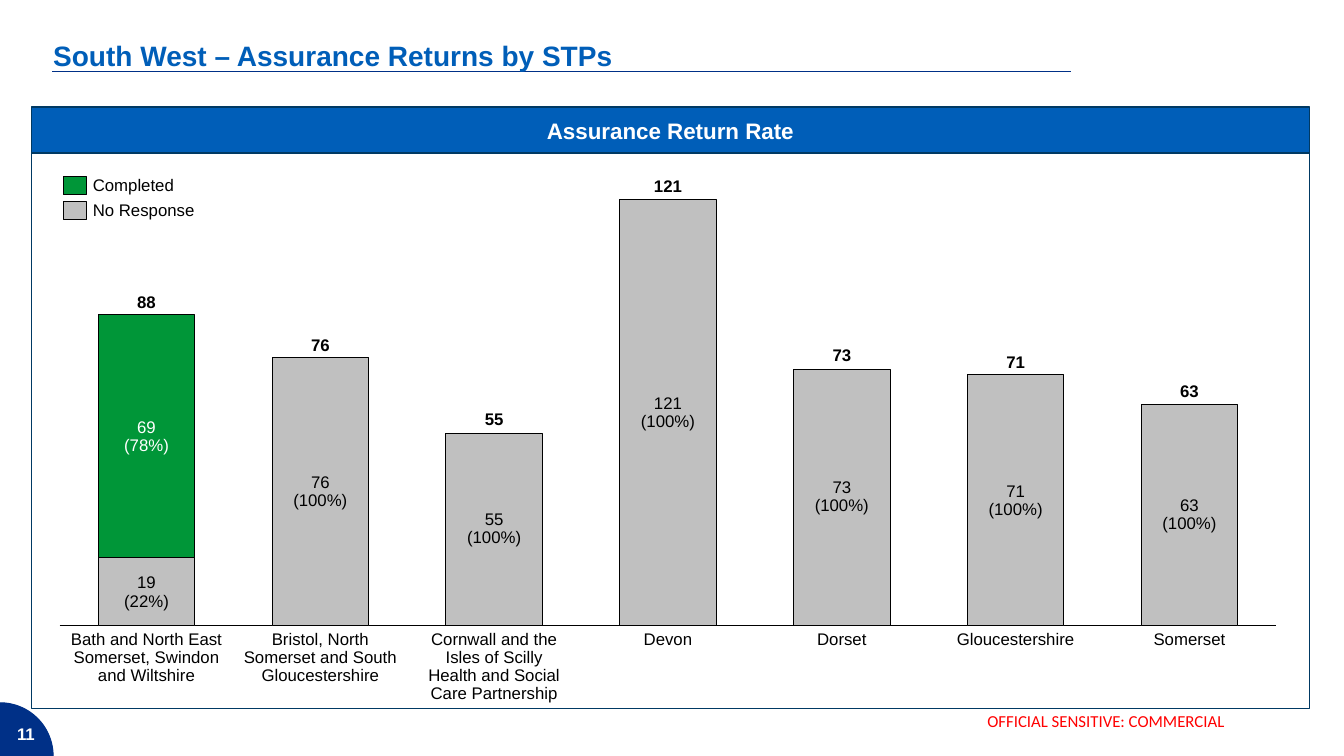
from copy import deepcopy
from dataclasses import dataclass
from math import cos, pi, sin

from lxml import etree
from pptx import Presentation
from pptx.chart.data import CategoryChartData
from pptx.dml.color import RGBColor
from pptx.enum.chart import XL_CHART_TYPE, XL_TICK_LABEL_POSITION, XL_TICK_MARK
from pptx.enum.shapes import MSO_CONNECTOR, MSO_SHAPE
from pptx.enum.text import MSO_ANCHOR, PP_ALIGN
from pptx.oxml import parse_xml
from pptx.oxml.ns import nsdecls, qn
from pptx.slide import Slide
from pptx.util import Cm, Pt

LEFT, CENTER = PP_ALIGN.LEFT, PP_ALIGN.CENTER
TOP, MIDDLE, BOTTOM = MSO_ANCHOR.TOP, MSO_ANCHOR.MIDDLE, MSO_ANCHOR.BOTTOM
RECTANGLE, STRAIGHT = MSO_SHAPE.RECTANGLE, MSO_CONNECTOR.STRAIGHT
COLUMN_STACKED = XL_CHART_TYPE.COLUMN_STACKED
NO_TICKS, NO_LABELS = XL_TICK_MARK.NONE, XL_TICK_LABEL_POSITION.NONE

# Area name, label width in cm, completed returns, missing returns
AREAS = [
    ("Bath and North East Somerset, Swindon and Wiltshire", 3.84, 69, 19),
    ("Bristol, North Somerset and South Gloucestershire", 3.89, 0, 76),
    ("Cornwall and the Isles of Scilly Health and Social Care Partnership", 3.33, 0, 55),
    ("Devon", 3.8, 0, 121),
    ("Dorset", 3.8, 0, 73),
    ("Gloucestershire", 3.8, 0, 71),
    ("Somerset", 3.8, 0, 63),
]
LARGEST = max(completed + missing for _, _, completed, missing in AREAS)

# Chart box in cm, and its plot area as fractions of that box
CHART_BOX = (1.19, 4.8, 31.29, 11.2)
PLOT_PARTS = {"x": 0.01, "y": 0.02, "w": 0.98, "h": 0.96}
PLOT_LEFT = CHART_BOX[0] + PLOT_PARTS["x"] * CHART_BOX[2]
PLOT_HEIGHT = PLOT_PARTS["h"] * CHART_BOX[3]
BASELINE = CHART_BOX[1] + PLOT_PARTS["y"] * CHART_BOX[3] + PLOT_HEIGHT
COLUMN_STEP = PLOT_PARTS["w"] * CHART_BOX[2] / len(AREAS)
LINE_HEIGHT = 0.46


@dataclass(frozen=True)
class Theme:
    blue: str = "005EB8"
    navy: str = "003087"
    frame: str = "003963"
    green: str = "009638"
    grey: str = "C0C0C0"
    black: str = "000000"
    white: str = "FFFFFF"
    red: str = "FF0000"
    font: str = "Arial"
    marking_font: str = "Calibri"
    title_size: int = 20
    banner_size: int = 16
    body_size: int = 12
    chart_size: int = 10
    thin: float = 0.75
    medium: float = 1


def apply_format(target, values):
    for name, value in values.items():
        setattr(target, name, value)


def bar_level(count):
    """Vertical position in cm of a count on the chart's scale."""
    return BASELINE - PLOT_HEIGHT * count / LARGEST


def bar_percent(count):
    """Bar height as a percentage of the tallest bar; none for an empty bar."""
    return round(100 * count / LARGEST) if count else None


@dataclass
class SlideBuilder:
    slide: Slide
    theme: Theme

    def paint(self, item, fill, line, width):
        if fill:
            item.fill.solid()
            item.fill.fore_color.rgb = RGBColor.from_string(fill)
        else:
            item.fill.background()
        item.line.color.rgb = RGBColor.from_string(line)
        item.line.width = Pt(width)

    def fill_text(self, shape, text, color=None, size=None, bold=False, font=None,
                  align=LEFT, anchor=TOP, spacing=None, margins=None, wrap=True):
        """Set text; margins are the side and the top-bottom inset in cm."""
        frame = shape.text_frame
        apply_format(frame, {"word_wrap": wrap, "vertical_anchor": anchor})
        if margins:
            side, end = map(Cm, margins)
            apply_format(frame, {"margin_left": side, "margin_right": side,
                                 "margin_top": end, "margin_bottom": end})
        paragraph = frame.paragraphs[0]
        paragraph.text = text
        apply_format(paragraph, {"alignment": align, "line_spacing": spacing})
        for run in paragraph.runs:
            apply_format(run.font, {"name": font or self.theme.font, "bold": bold,
                                    "size": Pt(size or self.theme.body_size)})
            run.font.color.rgb = RGBColor.from_string(color or self.theme.black)
        for line_break in paragraph._p.findall(qn("a:br")):
            line_break.append(deepcopy(paragraph.runs[0]._r.rPr))

    def text(self, box, text, **style):
        self.fill_text(self.slide.shapes.add_textbox(*map(Cm, box)), text, **style)

    def label(self, box, text, **style):
        self.text(box, text, **{"align": CENTER, "spacing": 0.9, "margins": (0, 0), **style})

    def rectangle(self, box, fill, line, width):
        shape = self.slide.shapes.add_shape(RECTANGLE, *map(Cm, box))
        shape.shadow.inherit = False
        self.paint(shape, fill, line, width)
        return shape

    def line(self, start, end, color, width):
        connector = self.slide.shapes.add_connector(STRAIGHT, *map(Cm, start + end))
        connector.line.color.rgb = RGBColor.from_string(color)
        connector.line.width = Pt(width)
        etree.SubElement(connector._element.spPr, qn("a:effectLst"))

    def corner_disc(self, bottom, radius, color, steps=32):
        """Quarter disc in the lower left corner of the slide."""
        angles = [step * pi / 2 / steps for step in range(steps + 1)]
        points = [(Cm(radius * cos(a)), Cm(bottom - radius * sin(a))) for a in angles]
        builder = self.slide.shapes.build_freeform(0, Cm(bottom))
        builder.add_line_segments(points, close=True)
        shape = builder.convert_to_shape()
        shape.shadow.inherit = False
        self.paint(shape, color, color, self.theme.thin)

    def stacked_chart(self, box, categories, series):
        """Add stacked columns; series holds name, values and colour."""
        theme = self.theme
        data = CategoryChartData()
        data.categories = categories
        for name, values, _ in series:
            data.add_series(name, values)
        chart = self.slide.shapes.add_chart(COLUMN_STACKED, *map(Cm, box), data).chart
        apply_format(chart, {"has_legend": False, "has_title": False})
        apply_format(chart.font, {"name": theme.marking_font, "size": Pt(theme.chart_size)})
        chart.font.color.rgb = RGBColor.from_string(theme.black)
        apply_format(chart.plots[0], {"gap_width": 80, "overlap": 100, "vary_by_categories": False})
        for chart_series, (_, _, color) in zip(chart.plots[0].series, series):
            self.paint(chart_series.format, color, theme.black, theme.thin)
        apply_format(chart.value_axis, {"visible": False, "has_major_gridlines": False,
                                        "minimum_scale": 0, "maximum_scale": 100})
        axis = chart.category_axis
        apply_format(axis, {"major_tick_mark": NO_TICKS, "minor_tick_mark": NO_TICKS,
                            "tick_label_position": NO_LABELS})
        axis.format.line.color.rgb = RGBColor.from_string(theme.black)
        axis.format.line.width = Pt(theme.thin)
        self.place_plot(chart)

    def place_plot(self, chart):
        plot_area = chart._chartSpace.find(".//" + qn("c:plotArea"))
        for layout in plot_area.findall(qn("c:layout")):
            plot_area.remove(layout)
        modes = '<c:layoutTarget val="inner"/><c:xMode val="edge"/><c:yMode val="edge"/>'
        parts = "".join(f'<c:{key} val="{value}"/>' for key, value in PLOT_PARTS.items())
        plot_area.insert(0, parse_xml(f'<c:layout {nsdecls("c")}><c:manualLayout>'
                                      f"{modes}{parts}</c:manualLayout></c:layout>"))


def add_area_labels(builder):
    theme = builder.theme
    for index, (name, width, completed, missing) in enumerate(AREAS):
        center = PLOT_LEFT + COLUMN_STEP * (index + 0.5)
        total = completed + missing
        builder.label((center - width / 2, 15.9, width, LINE_HEIGHT), name)
        builder.label((center - 0.43, bar_level(total) - 0.08 - LINE_HEIGHT, 0.86, LINE_HEIGHT),
                      str(total), bold=True, anchor=BOTTOM, wrap=False)
        for count, base, color in ((missing, 0, theme.black), (completed, missing, theme.white)):
            if count:
                middle = bar_level(base + count / 2)
                builder.label((center - 0.76, middle - LINE_HEIGHT, 1.52, 2 * LINE_HEIGHT),
                              f"{count}\n({count / total:.0%})", color=color,
                              anchor=MIDDLE, wrap=False)


def main():
    presentation = Presentation()
    apply_format(presentation, {"slide_width": Cm(33.87), "slide_height": Cm(19.05)})
    theme = Theme()
    builder = SlideBuilder(presentation.slides.add_slide(presentation.slide_layouts[6]), theme)

    builder.text((24.41, 17.65, 6.93, 1.02), "OFFICIAL SENSITIVE: COMMERCIAL", color=theme.red,
                 font=theme.marking_font, align=CENTER, anchor=MIDDLE)
    builder.line((1.32, 1.8), (27, 1.8), theme.navy, theme.medium)
    builder.corner_disc(19.05, 1.34, theme.navy)
    builder.text((0.18, 18.11, 1.8, 0.76), "11", color=theme.white, bold=True)

    builder.rectangle((0.79, 3.86, 32.21, 14), None, theme.frame, theme.medium)
    banner = builder.rectangle((0.79, 2.7, 32.21, 1.16), theme.blue, theme.frame, theme.medium)
    builder.fill_text(banner, "Assurance Return Rate", color=theme.white, size=theme.banner_size,
                      bold=True, align=CENTER, anchor=MIDDLE, margins=(0.3, 0.3))

    builder.stacked_chart(CHART_BOX, [str(number + 1) for number in range(len(AREAS))], [
        ("Series 1", [bar_percent(missing) for *_, missing in AREAS], theme.grey),
        ("Series 2", [bar_percent(completed) for _, _, completed, _ in AREAS], theme.green),
    ])
    add_area_labels(builder)

    for row, (name, color) in enumerate((("Completed", theme.green), ("No Response", theme.grey))):
        top = 4.45 + 0.63 * row
        builder.rectangle((1.6, top, 0.58, LINE_HEIGHT), color, theme.black, theme.thin)
        builder.label((2.34, top + 0.02, 2.57, LINE_HEIGHT), name, align=LEFT, anchor=MIDDLE)

    builder.text((1.09, 0.61, 27.48, 1.7), "South West – Assurance Returns by STPs", color=theme.blue,
                 size=theme.title_size, bold=True, anchor=MIDDLE, spacing=0.9)
    presentation.save("out.pptx")


if __name__ == "__main__":
    main()
